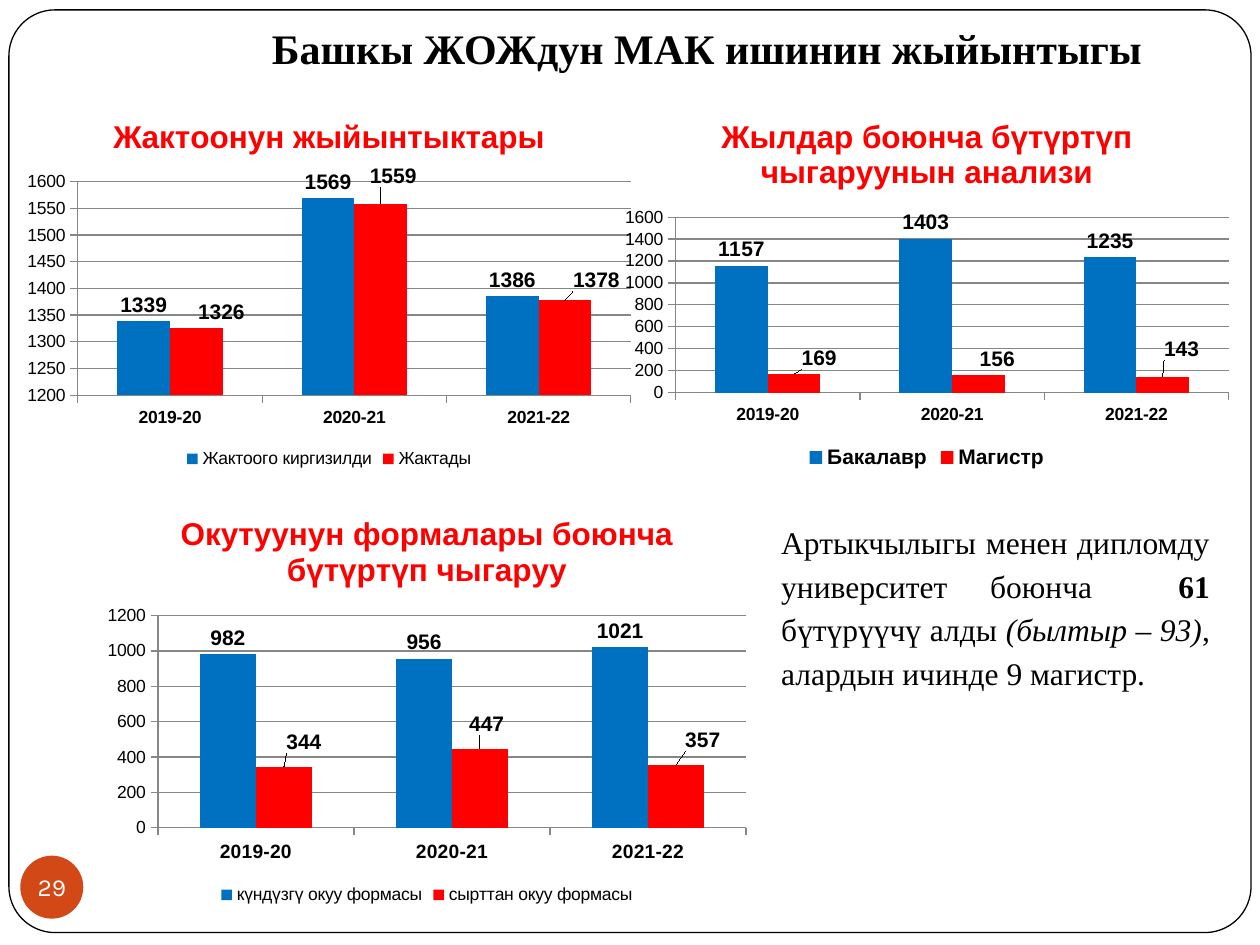
import lxml.etree
import pptx
import pptx.chart.data
import pptx.dml.color
import pptx.enum.chart
import pptx.enum.shapes
import pptx.enum.text
import pptx.oxml.ns
import pptx.util

Cm = pptx.util.Cm
Pt = pptx.util.Pt
RGBColor = pptx.dml.color.RGBColor
Align = pptx.enum.text.PP_ALIGN
Anchor = pptx.enum.text.MSO_ANCHOR
Shape = pptx.enum.shapes.MSO_SHAPE

BLACK = RGBColor(0x00, 0x00, 0x00)
WHITE = RGBColor(0xFF, 0xFF, 0xFF)
BLUE = RGBColor(0x00, 0x70, 0xC0)
RED = RGBColor(0xFF, 0x00, 0x00)
ORANGE = RGBColor(0xD3, 0x48, 0x17)
GREY = RGBColor(0x86, 0x86, 0x86)
SERIF = "Times New Roman"
YEARS = ["2019-20", "2020-21", "2021-22"]

CHARTS = [
    dict(
        box=(0.3, 1.93, 12.67, 7.62),
        title="Жактоонун жыйынтыктары",
        series={"Жактоого киргизилди": (1339, 1569, 1386), "Жактады": (1326, 1559, 1378)},
        scale=(1200, 1600, 50),
        shifts=[(0.04, 0), (0.02, -0.03), (0.05, -0.01)],
    ),
    dict(
        box=(12.35, 1.93, 12.67, 7.62),
        title="Жылдар боюнча бүтүртүп чыгаруунын анализи",
        series={"Бакалавр": (1157, 1403, 1235), "Магистр": (169, 156, 143)},
        scale=(0, 1600, 200),
        shifts=[(0.04, 0), (0.03, 0), (0.03, -0.03)],
        legend_size=12,
        legend_bold=True,
    ),
    dict(
        box=(1.9, 9.93, 13.41, 8.41),
        title="Окутуунун формалары боюнча бүтүртүп чыгаруу",
        series={"күндүзгү окуу формасы": (982, 956, 1021), "сырттан окуу формасы": (344, 447, 357)},
        scale=(0, 1200, 200),
        shifts=[(0.03, -0.02), (0.01, -0.02), (0.04, -0.02)],
        category_size=11,
    ),
]


def place(box):
    """Turn a box in centimetres into lengths."""
    return [Cm(length) for length in box]


def format_font(font, size=10, name="Arial", color=BLACK, bold=False, italic=False):
    """Set the face, size, colour and style of a font."""
    font.name, font.size, font.bold, font.italic = name, Pt(size), bold, italic
    font.color.rgb = color


def write(text_frame, spans, align=Align.CENTER, anchor=Anchor.TOP, spacing=None, **style):
    """Write one paragraph of (text, own style) spans sharing a common style."""
    text_frame.word_wrap = True
    text_frame.auto_size = pptx.enum.text.MSO_AUTO_SIZE.NONE
    text_frame.vertical_anchor = anchor
    para = text_frame.paragraphs[0]
    para.alignment = align
    if spacing:
        para.line_spacing = spacing
    for text, own_style in spans:
        span = para.add_run()
        span.text = text
        format_font(span.font, **{**style, **own_style})


def add_shape(page, kind, box, fill):
    """Add a flat preset shape without a line."""
    shape = page.shapes.add_shape(kind, *place(box))
    shape.shadow.inherit = False
    shape.fill.solid()
    shape.fill.fore_color.rgb = fill
    shape.line.fill.background()
    return shape


def add_heading(page, box):
    """Place the title over the rounded page frame."""
    border = add_shape(page, Shape.ROUNDED_RECTANGLE, (0.18, 0.2, 25.04, 18.6), WHITE)
    border.adjustments[0] = 0.05
    border.line.color.rgb = BLACK
    border.line.width = Pt(0.75)
    title = page.shapes.title
    title._element.addprevious(border._element)
    title.left, title.top, title.width, title.height = place(box)
    write(title.text_frame, [("Башкы ЖОЖдун МАК ишинин жыйынтыгы", {})],
          name=SERIF, size=24, bold=True)


def add_page_number(page, box):
    """Place the page number in a circle."""
    circle = add_shape(page, Shape.OVAL, box, ORANGE)
    text_frame = circle.text_frame
    text_frame.margin_left = text_frame.margin_right = 0
    text_frame.margin_top = text_frame.margin_bottom = 0
    write(text_frame, [("29", {})], anchor=Anchor.MIDDLE, name="Karla", size=14, color=WHITE)


def format_labels(labels):
    """Show labels in bold above the columns."""
    format_font(labels.font, size=12, bold=True)
    labels.position = pptx.enum.chart.XL_LABEL_POSITION.OUTSIDE_END


def shift_labels(series, shifts):
    """Move each label of a series by a share of the chart's size."""
    qn = pptx.oxml.ns.qn
    for index, shift in enumerate(shifts):
        format_labels(series.points[index].data_label)
    for label, shift in zip(series._element.findall(".//" + qn("c:dLbl")), shifts):
        layout = lxml.etree.Element(qn("c:layout"))
        manual = lxml.etree.SubElement(layout, qn("c:manualLayout"))
        for axis, share in zip("xy", shift):
            lxml.etree.SubElement(manual, qn("c:" + axis)).set("val", str(share))
        label.find(qn("c:idx")).addnext(layout)


def format_axes(chart, scale, category_size):
    """Set the scale, ticks, lines and fonts of both axes."""
    values, categories = chart.value_axis, chart.category_axis
    values.minimum_scale, values.maximum_scale, values.major_unit = scale
    values.has_major_gridlines = True
    for axis in (values, categories):
        axis.major_tick_mark = pptx.enum.chart.XL_TICK_MARK.OUTSIDE
        axis.format.line.color.rgb = GREY
    values.major_gridlines.format.line.color.rgb = GREY
    format_font(values.tick_labels.font)
    format_font(categories.tick_labels.font, size=category_size, bold=True)


def add_column_chart(page, box, title, series, scale, shifts,
                     legend_size=10, legend_bold=False, category_size=10):
    """Place a chart of blue and red columns by year."""
    data = pptx.chart.data.CategoryChartData()
    data.categories = YEARS
    for name, values in series.items():
        data.add_series(name, values)
    kind = pptx.enum.chart.XL_CHART_TYPE.COLUMN_CLUSTERED
    chart = page.shapes.add_chart(kind, *place(box), data).chart
    format_font(chart.font)
    chart.has_title = True
    write(chart.chart_title.text_frame, [(title, {})], size=18, color=RED, bold=True)
    chart.chart_title.include_in_layout = False
    chart.has_legend = True
    chart.legend.position = pptx.enum.chart.XL_LEGEND_POSITION.BOTTOM
    chart.legend.include_in_layout = False
    format_font(chart.legend.font, size=legend_size, bold=legend_bold)
    format_axes(chart, scale, category_size)
    plot = chart.plots[0]
    plot.gap_width, plot.overlap, plot.vary_by_categories = 150, 0, False
    for columns, color in zip(plot.series, (BLUE, RED)):
        columns.format.fill.solid()
        columns.format.fill.fore_color.rgb = color
        columns.data_labels.show_value = True
        format_labels(columns.data_labels)
    shift_labels(plot.series[1], shifts)


def add_summary(page, box):
    """Place the paragraph on diplomas with honours."""
    text_frame = page.shapes.add_textbox(*place(box)).text_frame
    spans = [
        ("Артыкчылыгы менен дипломду университет боюнча  ", {}),
        ("61 ", {"bold": True}),
        ("бүтүрүүчү алды ", {}),
        ("(былтыр – 93)", {"italic": True}),
        (", алардын ичинде 9 магистр", {}),
        (". ", {"italic": True}),
    ]
    write(text_frame, spans, align=Align.JUSTIFY, spacing=1.15, name=SERIF, size=18)


def main():
    """Build and save the deck."""
    deck = pptx.Presentation()
    deck.slide_width, deck.slide_height = Cm(25.4), Cm(19.05)
    page = deck.slides.add_slide(deck.slide_layouts.get_by_name("Title Only"))
    add_heading(page, (3.5, 0.33, 21.5, 1.27))
    add_page_number(page, (0.41, 17.25, 1.27, 1.27))
    for chart in CHARTS:
        add_column_chart(page, **chart)
    add_summary(page, (15.5, 10.31, 9.14, 3.78))
    deck.save("out.pptx")


if __name__ == "__main__":
    main()
